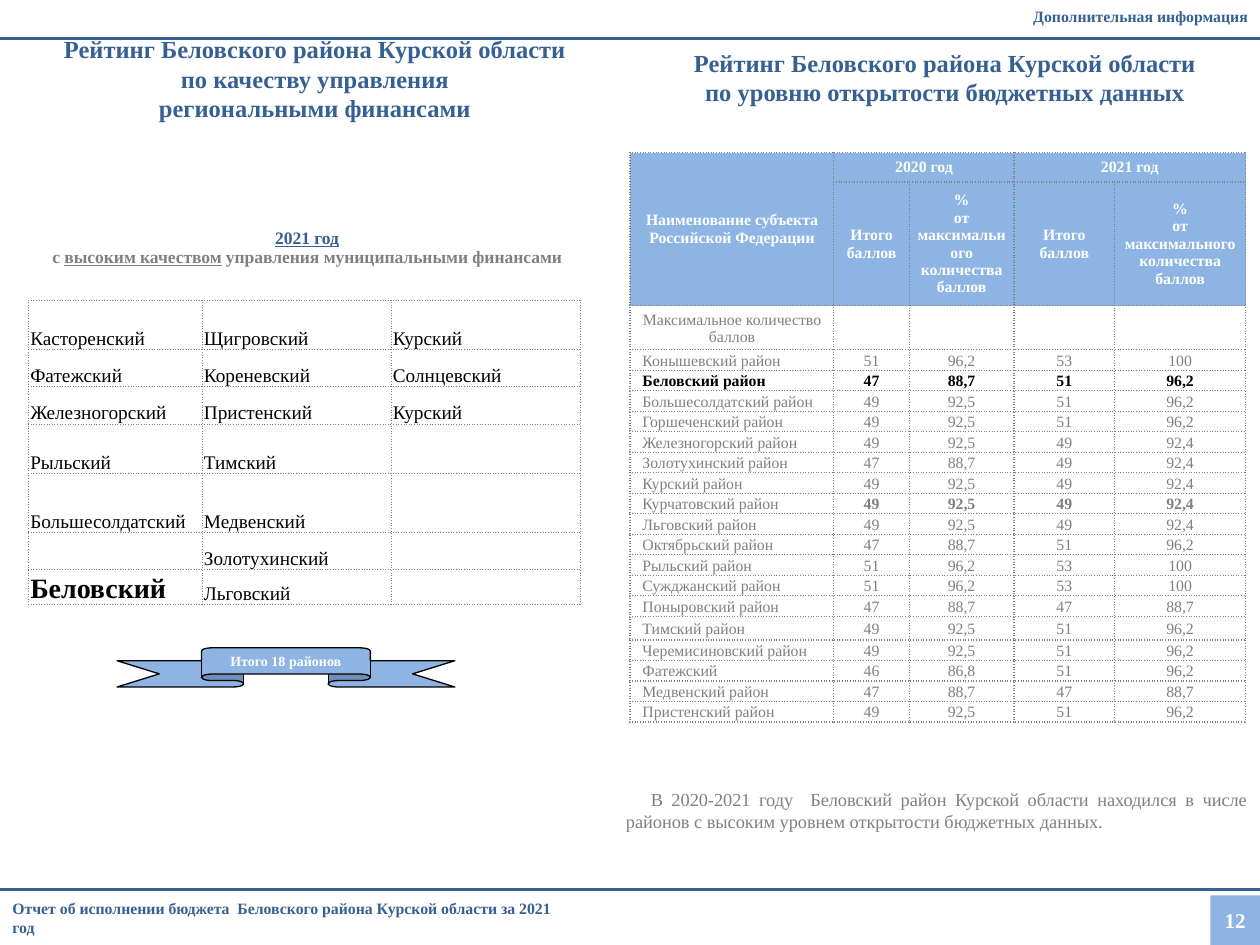
from collections import namedtuple

from lxml.etree import SubElement
from pptx import Presentation
from pptx.dml.color import RGBColor
from pptx.enum.shapes import MSO_CONNECTOR, MSO_SHAPE
from pptx.enum.text import MSO_ANCHOR, PP_ALIGN
from pptx.oxml.ns import qn
from pptx.util import Cm, Pt

NAVY = RGBColor(0x37, 0x60, 0x92)
SKY = RGBColor(0x8E, 0xB4, 0xE3)
GRAY = RGBColor(0x80, 0x80, 0x80)
BLACK = RGBColor(0, 0, 0)
WHITE = RGBColor(0xFF, 0xFF, 0xFF)
FONT = "Times New Roman"

Box = namedtuple("Box", "left top width height")

QUALITY_ROWS = [
    ("Касторенский", "Щигровский", "Курский"),
    ("Фатежский", "Кореневский", "Солнцевский"),
    ("Железногорский", "Пристенский", "Курский"),
    ("Рыльский", "Тимский", ""),
    ("Большесолдатский", "Медвенский", ""),
    ("", "Золотухинский", ""),
    ("Беловский", "Льговский", ""),
]
OPENNESS_ROWS = [
    ("Конышевский район", "51", "96,2", "53", "100"),
    ("Беловский район", "47", "88,7", "51", "96,2"),
    ("Большесолдатский район", "49", "92,5", "51", "96,2"),
    ("Горшеченский район", "49", "92,5", "51", "96,2"),
    ("Железногорский район", "49", "92,5", "49", "92,4"),
    ("Золотухинский район", "47", "88,7", "49", "92,4"),
    ("Курский район", "49", "92,5", "49", "92,4"),
    ("Курчатовский район", "49", "92,5", "49", "92,4"),
    ("Льговский район", "49", "92,5", "49", "92,4"),
    ("Октябрьский район", "47", "88,7", "51", "96,2"),
    ("Рыльский район", "51", "96,2", "53", "100"),
    ("Сужджанский район", "51", "96,2", "53", "100"),
    ("Поныровский район", "47", "88,7", "47", "88,7"),
    ("Тимский район", "49", "92,5", "51", "96,2"),
    ("Черемисиновский район", "49", "92,5", "51", "96,2"),
    ("Фатежский", "46", "86,8", "51", "96,2"),
    ("Медвенский район", "47", "88,7", "47", "88,7"),
    ("Пристенский район", "49", "92,5", "51", "96,2"),
]


def style_run(run, size, color, bold):
    run.font.name = FONT
    run.font.size = Pt(size)
    run.font.color.rgb = color
    run.font.bold = bold


def write(frame, text, size, color, bold=True, align=PP_ALIGN.LEFT):
    frame.text = text
    for paragraph in frame.paragraphs:
        paragraph.alignment = align
        for run in paragraph.runs:
            style_run(run, size, color, bold)
        if not paragraph.runs:
            SubElement(paragraph._p, qn("a:endParaRPr"), sz=str(size * 100))


def add_text(slide, box, text, size, color, bold=True, align=PP_ALIGN.LEFT,
             anchor=MSO_ANCHOR.TOP, top_inset=0.13):
    frame = slide.shapes.add_textbox(*map(Cm, box)).text_frame
    frame.word_wrap = True
    frame.vertical_anchor = anchor
    frame.margin_top = Cm(top_inset)
    write(frame, text, size, color, bold, align)
    return frame


def add_filled_shape(slide, kind, box, text, size):
    shape = slide.shapes.add_shape(kind, *map(Cm, box))
    shape.shadow.inherit = False
    shape.fill.solid()
    shape.fill.fore_color.rgb = SKY
    shape.line.fill.background()
    shape.text_frame.vertical_anchor = MSO_ANCHOR.MIDDLE
    write(shape.text_frame, text, size, WHITE, align=PP_ALIGN.CENTER)
    return shape


def add_rule(slide, left, top, width):
    rule = slide.shapes.add_connector(
        MSO_CONNECTOR.STRAIGHT, Cm(left), Cm(top), Cm(left + width), Cm(top))
    rule.line.color.rgb = NAVY
    rule.line.width = Pt(1.5)
    SubElement(rule._element.spPr, qn("a:effectLst"))


def format_cell(cell, margins, anchor, fill=None, sides="LRTB"):
    cell.margin_left, cell.margin_top, cell.margin_right, cell.margin_bottom = map(Cm, margins)
    cell.vertical_anchor = anchor
    properties = cell._tc.get_or_add_tcPr()
    for side in "LRTB":
        border = SubElement(properties, qn("a:ln" + side), w=str(Pt(0.75)))
        if side in sides:
            paint = SubElement(border, qn("a:solidFill"))
            SubElement(paint, qn("a:srgbClr"), val=str(GRAY))
            SubElement(border, qn("a:prstDash"), val="sysDot")
        else:
            SubElement(border, qn("a:noFill"))
    if fill is None:
        cell.fill.background()
    else:
        cell.fill.solid()
        cell.fill.fore_color.rgb = fill


def add_grid(slide, left, top, widths, heights):
    table = slide.shapes.add_table(
        len(heights), len(widths), Cm(left), Cm(top),
        Cm(sum(widths)), Cm(sum(heights))).table
    table.first_row = table.horz_banding = False
    for column, width in zip(table.columns, widths):
        column.width = Cm(width)
    for row, height in zip(table.rows, heights):
        row.height = Cm(height)
    return table


def draw_header(slide, box):
    add_text(slide, box, "Дополнительная информация", 9, NAVY, align=PP_ALIGN.RIGHT)
    add_rule(slide, box.left, box.top + 0.78, box.width)


def draw_footer(slide, box):
    add_text(slide, Box(box.left, box.top, 11.68, box.height),
             "Отчет об исполнении бюджета  Беловского района Курской области за 2021 год",
             9, NAVY, anchor=MSO_ANCHOR.MIDDLE)
    add_rule(slide, box.left, box.top, box.width)
    side = 1.0
    add_filled_shape(slide, MSO_SHAPE.RECTANGLE,
                     Box(box.left + box.width - side, box.top + box.height - side, side, side),
                     "12", 12)


def draw_quality_table(slide, left, top):
    table = add_grid(slide, left, top, [3.5, 3.81, 3.81],
                     [2.11, 1.0, 0.75, 0.75, 1.0, 1.19, 0.74, 0.69])
    for cell in table.rows[0].cells:
        format_cell(cell, (0.2, 0.13, 0.1, 0.13), MSO_ANCHOR.MIDDLE, sides="B")
    heading = table.cell(0, 0)
    heading.merge(table.cell(0, 2))
    write(heading.text_frame, "2021 год\nс ", 10, NAVY, align=PP_ALIGN.CENTER)
    year, verdict = heading.text_frame.paragraphs
    year.runs[0].font.underline = True
    verdict.add_run().text = "высоким качеством"
    verdict.add_run().text = " управления муниципальными финансами"
    for run in verdict.runs:
        style_run(run, 10, GRAY, True)
    verdict.runs[1].font.underline = True
    for row, districts in enumerate(QUALITY_ROWS, start=1):
        for column, district in enumerate(districts):
            cell = table.cell(row, column)
            format_cell(cell, (0.03, 0.03, 0.03, 0), MSO_ANCHOR.BOTTOM)
            featured = district == "Беловский"
            write(cell.text_frame, district, 16 if featured else 11, BLACK, featured)


def draw_quality_rating(slide, box):
    add_text(slide, Box(box.left, box.top, box.width, 2.82),
             "Рейтинг Беловского района Курской области\n"
             "по качеству управления\nрегиональными финансами",
             14, NAVY, align=PP_ALIGN.CENTER, top_inset=0)
    draw_quality_table(slide, box.left + 0.58, box.top + 3.25)
    ribbon = add_filled_shape(slide, MSO_SHAPE.UP_RIBBON,
                              Box(box.left + 2.36, box.top + 12.37, 6.81, 0.79),
                              "Итого 18 районов", 8)
    ribbon.adjustments[0] = 0.33
    ribbon.adjustments[1] = 0.5
    ribbon.line.color.rgb = BLACK
    ribbon.line.width = Pt(0.75)


def draw_openness_table(slide, left, top):
    heights = [0.59, 2.48, 0.89] + [
        0.48 if district[0] == "Тимский район" else 0.41 for district in OPENNESS_ROWS]
    table = add_grid(slide, left, top, [4.11, 1.52, 2.11, 2.03, 2.64], heights)
    measures = ["Итого\nбаллов", "%\nот максимального количества баллов"] * 2
    headings = [
        ("Наименование субъекта Российской Федерации", "2020 год", "", "2021 год", ""),
        ("", *measures),
    ]
    limit = ("Максимальное количество баллов", "", "", "", "")
    for row, values in enumerate([*headings, limit, *OPENNESS_ROWS]):
        heading, district = row < 2, row > 2
        featured = values[0] == "Беловский район"
        color = WHITE if heading else BLACK if featured else GRAY
        for column, value in enumerate(values):
            cell = table.cell(row, column)
            named = district and column == 0
            margins = (0.1,) * 4 if heading else (0.25 if named else 0.03, 0.03, 0.03, 0)
            format_cell(cell, margins, MSO_ANCHOR.MIDDLE, SKY if heading else None)
            bold = heading or featured or (values[0] == "Курчатовский район" and column > 0)
            write(cell.text_frame, value, 9, color, bold,
                  PP_ALIGN.LEFT if named else PP_ALIGN.CENTER)
    for first, last in [((0, 0), (1, 0)), ((0, 1), (0, 2)), ((0, 3), (0, 4))]:
        table.cell(*first).merge(table.cell(*last))


def draw_openness_rating(slide, box):
    add_text(slide, Box(box.left, box.top + 0.1, box.width, 2.08),
             "Рейтинг Беловского района Курской области\nпо уровню открытости бюджетных данных",
             14, NAVY, align=PP_ALIGN.CENTER, top_inset=0.18)
    draw_openness_table(slide, box.left, box.top + 2.39)
    conclusion = add_text(
        slide, Box(box.left - 0.33, box.top + 15.06, 13.03, 1.14),
        "В 2020-2021 году  Беловский район Курской области находился в числе районов "
        "с высоким уровнем открытости бюджетных данных.",
        10.5, GRAY, bold=False, align=PP_ALIGN.JUSTIFY)
    conclusion.paragraphs[0]._p.get_or_add_pPr().set("indent", str(Cm(0.5)))


def main():
    presentation = Presentation()
    presentation.slide_width, presentation.slide_height = Cm(25.4), Cm(19.05)
    slide = presentation.slides.add_slide(presentation.slide_layouts[6])
    draw_footer(slide, Box(0, 17.93, 25.4, 1.12))
    draw_header(slide, Box(0, 0, 25.4, 0.64))
    draw_quality_rating(slide, Box(0, 0.69, 12.7, 13.2))
    draw_openness_rating(slide, Box(12.7, 0.69, 12.7, 16.2))
    presentation.save("out.pptx")


if __name__ == "__main__":
    main()
